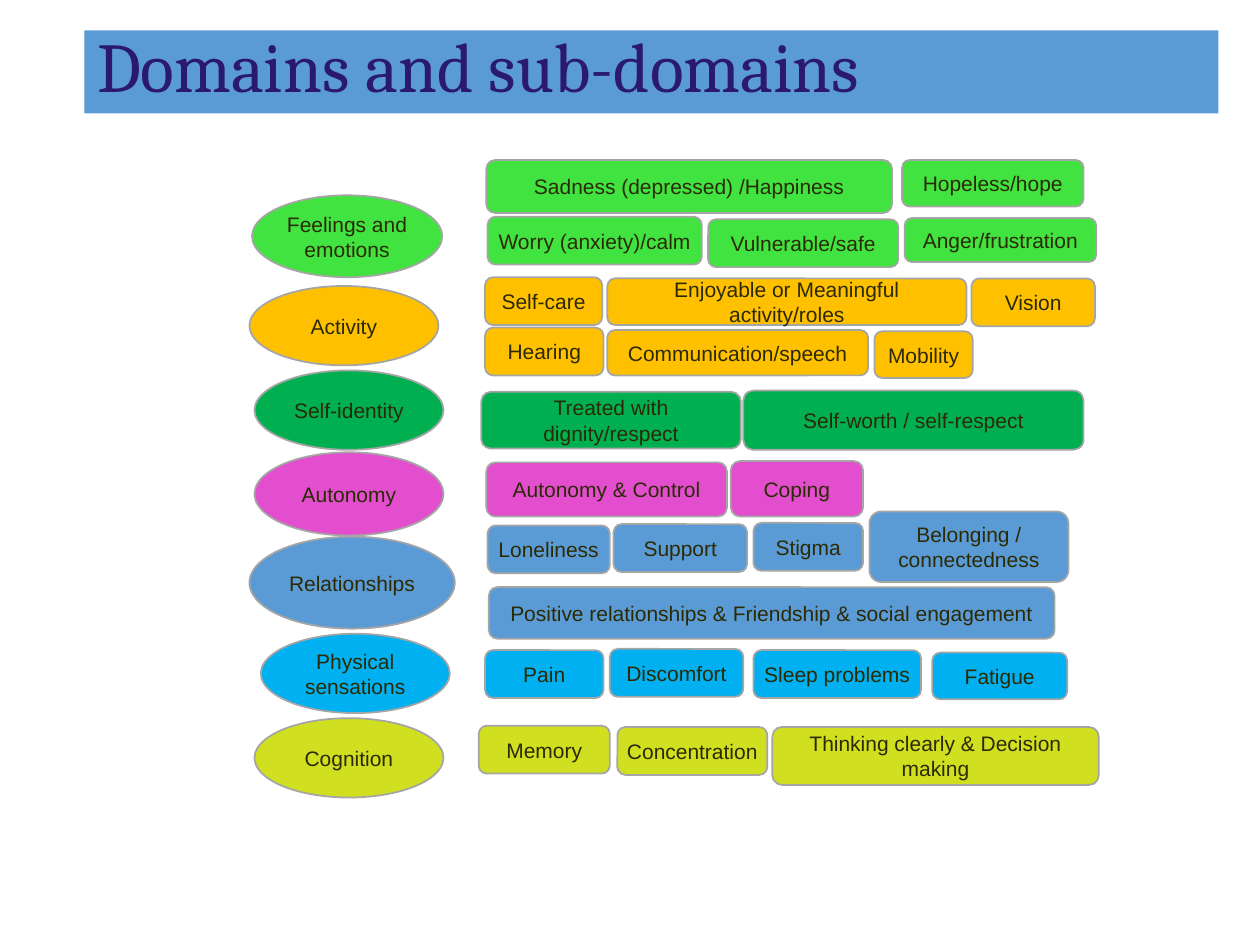
from pptx import Presentation
from pptx.dml.color import RGBColor
from pptx.enum.shapes import MSO_SHAPE
from pptx.enum.text import MSO_ANCHOR, MSO_AUTO_SIZE, PP_ALIGN
from pptx.util import Inches, Pt

GREEN = RGBColor(0x41, 0xE3, 0x41)
AMBER = RGBColor(0xFF, 0xC0, 0x00)
DARK_GREEN = RGBColor(0x00, 0xB0, 0x50)
PINK = RGBColor(0xE2, 0x4E, 0xCD)
BLUE = RGBColor(0x5B, 0x9B, 0xD5)
SKY = RGBColor(0x00, 0xB0, 0xF0)
LIME = RGBColor(0xD1, 0xDF, 0x21)
OUTLINE = RGBColor(0xA5, 0xA5, 0xA5)
LABEL = RGBColor(0x2B, 0x2A, 0x05)
TITLE = RGBColor(0x2A, 0x19, 0x6F)

# Domain, colour, ellipse box, then its sub-domains; boxes are left, top, width, height
DOMAINS = [
    ("Feelings and emotions", GREEN, (2, 1.55, 1.51, 0.65), [
        ("Sadness (depressed) /Happiness", (3.86, 1.27, 3.22, 0.42)),
        ("Hopeless/hope", (7.16, 1.27, 1.44, 0.37)),
        ("Worry (anxiety)/calm", (3.87, 1.72, 1.7, 0.38)),
        ("Vulnerable/safe", (5.62, 1.74, 1.51, 0.38)),
        ("Anger/frustration", (7.18, 1.73, 1.52, 0.35)),
    ]),
    ("Activity", AMBER, (1.98, 2.27, 1.5, 0.63), [
        ("Self-care", (3.85, 2.2, 0.93, 0.38)),
        ("Enjoyable or Meaningful activity/roles", (4.82, 2.21, 2.85, 0.37)),
        ("Vision", (7.71, 2.21, 0.98, 0.38)),
        ("Hearing", (3.85, 2.6, 0.94, 0.38)),
        ("Communication/speech", (4.82, 2.62, 2.07, 0.36)),
        ("Mobility", (6.94, 2.63, 0.78, 0.37)),
    ]),
    ("Self-identity", DARK_GREEN, (2.02, 2.94, 1.5, 0.63), [
        ("Treated with dignity/respect", (3.82, 3.11, 2.06, 0.45)),
        ("Self-worth / self-respect", (5.9, 3.1, 2.7, 0.47)),
    ]),
    ("Autonomy", PINK, (2.02, 3.59, 1.5, 0.66), [
        ("Autonomy & Control", (3.86, 3.67, 1.91, 0.43)),
        ("Coping", (5.8, 3.66, 1.05, 0.44)),
    ]),
    ("Relationships", BLUE, (1.98, 4.26, 1.63, 0.73), [
        ("Loneliness", (3.87, 4.17, 0.97, 0.38)),
        ("Support", (4.87, 4.16, 1.06, 0.38)),
        ("Stigma", (5.98, 4.15, 0.87, 0.38)),
        ("Belonging / connectedness", (6.9, 4.06, 1.58, 0.56)),
        ("Positive relationships & Friendship & social engagement",
         (3.88, 4.66, 4.49, 0.41)),
    ]),
    ("Physical sensations", SKY, (2.07, 5.03, 1.5, 0.63), [
        ("Pain", (3.85, 5.16, 0.94, 0.38)),
        ("Discomfort", (4.84, 5.15, 1.06, 0.38)),
        ("Sleep problems", (5.98, 5.16, 1.33, 0.38)),
        ("Fatigue", (7.4, 5.18, 1.07, 0.37)),
    ]),
    ("Cognition", LIME, (2.02, 5.7, 1.5, 0.63), [
        ("Memory", (3.8, 5.76, 1.04, 0.38)),
        ("Concentration", (4.9, 5.77, 1.19, 0.38)),
        ("Thinking clearly & Decision making", (6.13, 5.77, 2.59, 0.46)),
    ]),
]


def add_run(paragraph, text, font_name, size, color):
    run = paragraph.add_run()
    run.text = text
    run.font.name = font_name
    run.font.size = Pt(size)
    run.font.color.rgb = color


def add_bubble(slide, outline, text, color, box):
    """Add one filled, outlined shape with a centred label."""
    bubble = slide.shapes.add_shape(outline, *map(Inches, box))
    bubble.shadow.inherit = False
    bubble.fill.solid()
    bubble.fill.fore_color.rgb = color
    bubble.line.color.rgb = OUTLINE
    bubble.line.width = Pt(1)
    frame = bubble.text_frame
    frame.word_wrap = True
    frame.vertical_anchor = MSO_ANCHOR.MIDDLE
    # Narrow side margins keep the longest labels from breaking
    frame.margin_left = frame.margin_right = Inches(0.04)
    frame.margin_top = frame.margin_bottom = Inches(0.03)
    label = frame.paragraphs[0]
    label.alignment = PP_ALIGN.CENTER
    add_run(label, text, "Arial", 12, LABEL)


prs = Presentation()
prs.slide_width = Inches(10)
prs.slide_height = Inches(7.5)
slide = prs.slides.add_slide(prs.slide_layouts[5])

title = slide.shapes.title
title.left, title.top = Inches(0.67), Inches(0.24)
title.width, title.height = Inches(9), Inches(0.66)
title.fill.solid()
title.fill.fore_color.rgb = BLUE
title.text_frame.auto_size = MSO_AUTO_SIZE.NONE
title.text_frame.vertical_anchor = MSO_ANCHOR.TOP
heading = title.text_frame.paragraphs[0]
heading.alignment = PP_ALIGN.LEFT
heading.line_spacing = 0.83
add_run(heading, "Domains and sub-domains", "Cambria", 40, TITLE)

for domain, color, domain_box, subdomains in DOMAINS:
    add_bubble(slide, MSO_SHAPE.OVAL, domain, color, domain_box)
    for subdomain, subdomain_box in subdomains:
        add_bubble(slide, MSO_SHAPE.ROUNDED_RECTANGLE, subdomain, color, subdomain_box)

prs.save("out.pptx")
